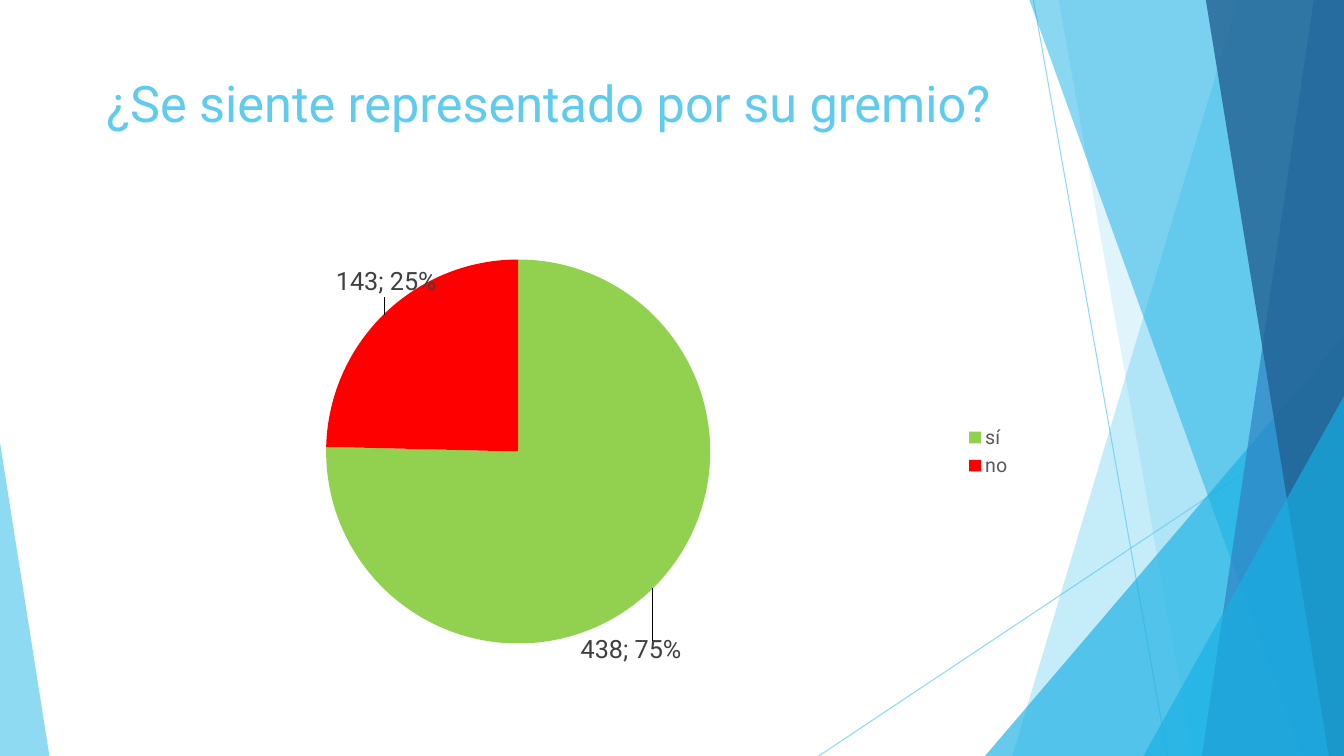
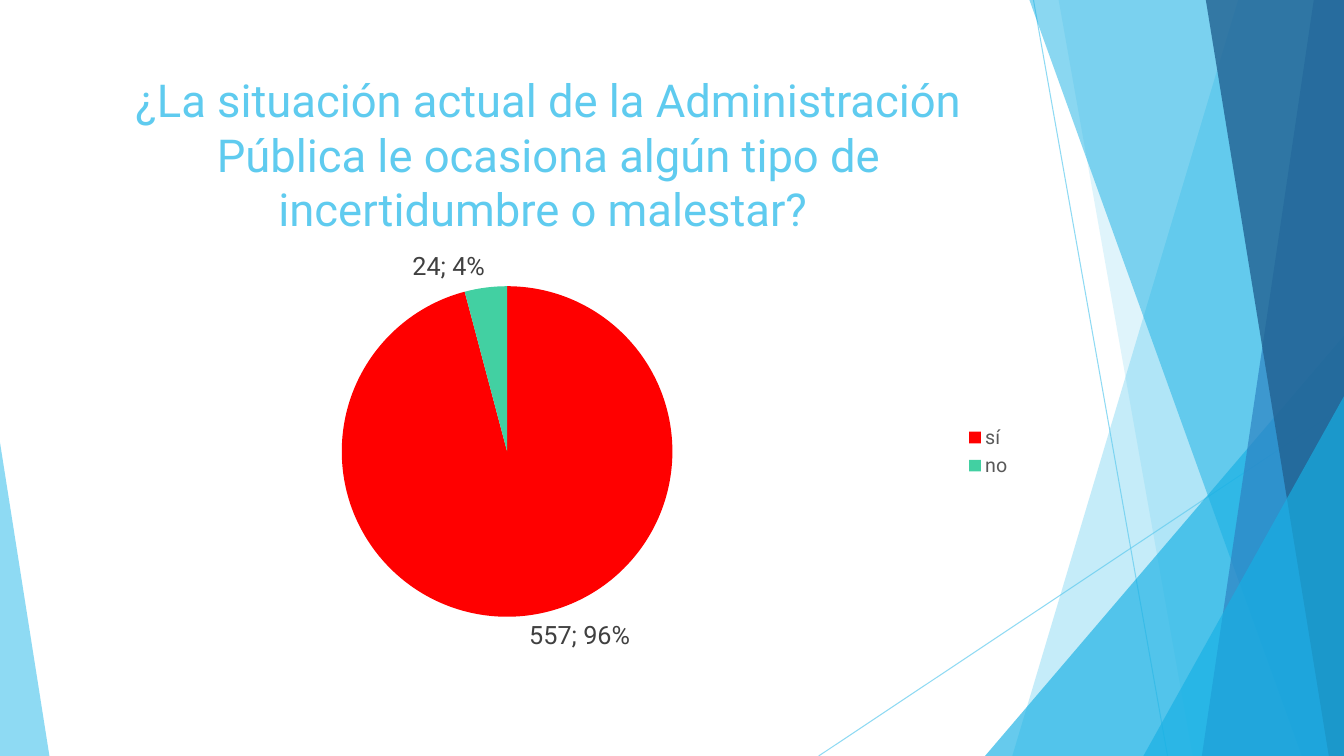
from pptx import Presentation
from pptx.chart.data import CategoryChartData
from pptx.dml.color import RGBColor
from pptx.enum.chart import XL_CHART_TYPE, XL_LABEL_POSITION, XL_LEGEND_POSITION
from pptx.enum.shapes import MSO_CONNECTOR, MSO_SHAPE
from pptx.enum.text import MSO_ANCHOR, MSO_AUTO_SIZE, PP_ALIGN
from pptx.oxml import parse_xml
from pptx.oxml.ns import nsdecls
from pptx.util import Inches, Pt
from lxml import etree

PIE = XL_CHART_TYPE.PIE
OUTSIDE = XL_LABEL_POSITION.OUTSIDE_END
RIGHT = XL_LEGEND_POSITION.RIGHT
LINE = MSO_CONNECTOR.STRAIGHT
WEDGE = MSO_SHAPE.ISOSCELES_TRIANGLE
TOP = MSO_ANCHOR.TOP
FIXED = MSO_AUTO_SIZE.NONE
CENTER = PP_ALIGN.CENTER

WIDTH, HEIGHT = 13.33, 7.5
SKY, CYAN, BLUE, NAVY = "5FCBEF", "17B0E4", "2E83C3", "226292"
GREEN, RED, MINT = "92D050", "FF0000", "42D0A2"
FACE = "Roboto"
TITLE = (0.74, 0.67, 9.4, 1.44)
CHART = (0.74, 2.36, 9.4, 4.24)
MIDDLE = 4.48

RAYS = [((10.25, 0), (11.58, HEIGHT)), ((WIDTH, 4.03), (8.12, HEIGHT))]
BANDS = [
    (12.28, 10.04, SKY, 36),
    (10.5, 11.83, SKY, 20),
    (9.77, 3.33, 3.56, 1, CYAN, 66),
    (10.21, 12.91, CYAN, 50),
    (13.03, 11.92, BLUE, 70),
    (11.96, 13.18, NAVY, 80),
    (11.34, 3.93, 1.99, 1, CYAN, 66),
    (0, 4.39, 0.49, 0, SKY, 70),
]

PIES = [
    {
        "title": "¿Se siente representado por su gremio?",
        "size": 36,
        "counts": (438, 143),
        "colors": (GREEN, RED),
        "center": 5.14,
        "width": 3.81,
        "shifts": ((-0.08, 0.11), (0.06, -0.03)),
    },
    {
        "title": "¿La situación actual de la Administración Pública le "
                 "ocasiona algún tipo de incertidumbre o malestar? ",
        "size": 32.4,
        "counts": (557, 24),
        "colors": (RED, MINT),
        "center": 5.03,
        "width": 3.28,
        "shifts": (),
    },
]


def color(code):
    return RGBColor.from_string(code)


def inches(*sizes):
    return [Inches(size) for size in sizes]


def layout(head="", **parts):
    body = "".join(f'<c:{key} val="{part:.4f}"/>' for key, part in parts.items())
    return parse_xml(
        f'<c:layout {nsdecls("c")}><c:manualLayout>{head}{body}'
        "</c:manualLayout></c:layout>"
    )


class Deck:
    def __init__(self):
        self.show = Presentation()
        self.show.slide_width, self.show.slide_height = inches(WIDTH, HEIGHT)
        self.slide = None

    def page(self, title, size):
        self.slide = self.show.slides.add_slide(self.show.slide_layouts[5])
        for start, end in RAYS:
            self.ray(start, end)
        for band in BANDS:
            if len(band) == 4:
                self.band(*band)
            else:
                self.wedge(*band)
        self.title(title, size)

    def font(self, font, size, code):
        font.name = FACE
        font.size = Pt(size)
        font.color.rgb = color(code)

    def fade(self, fill, alpha):
        code = fill._xPr.find(".//{*}srgbClr")
        tag = etree.QName(code).namespace
        etree.SubElement(code, f"{{{tag}}}alpha", val=str(alpha * 1000))

    def paint(self, shape, code, alpha):
        shape.shadow.inherit = False
        shape.fill.solid()
        shape.fill.fore_color.rgb = color(code)
        self.fade(shape.fill, alpha)
        shape.line.fill.background()

    def ray(self, start, end):
        ray = self.slide.shapes.add_connector(LINE, *inches(*start, *end))
        ray.line.width = Pt(0.75)
        ray.line.color.rgb = color(SKY)
        self.fade(ray.line.fill, 70)
        ray._element.spPr.append(parse_xml(f'<a:effectLst {nsdecls("a")}/>'))

    def band(self, top, base, code, alpha):
        pen = self.slide.shapes.build_freeform(*inches(top, 0))
        ends = [(WIDTH, 0), (WIDTH, HEIGHT), (base, HEIGHT)]
        pen.add_line_segments([inches(*end) for end in ends], close=True)
        self.paint(pen.convert_to_shape(), code, alpha)

    def wedge(self, left, top, width, peak, code, alpha):
        wedge = self.slide.shapes.add_shape(
            WEDGE, *inches(left, top, width, HEIGHT - top))
        wedge.adjustments[0] = peak
        self.paint(wedge, code, alpha)

    def title(self, text, size):
        title = self.slide.shapes.title
        title.left, title.top, title.width, title.height = inches(*TITLE)
        frame = title.text_frame
        frame.text = text
        frame.word_wrap = True
        frame.auto_size = FIXED
        frame.vertical_anchor = TOP
        line = frame.paragraphs[0]
        line.alignment = CENTER
        self.font(line.runs[0].font, size, SKY)
        self.slide.shapes._spTree.append(title._element)

    def pie(self, counts, colors, center, width, shifts):
        data = CategoryChartData()
        data.categories = ["sí", "no"]
        data.add_series("Series 1", counts)
        chart = self.slide.shapes.add_chart(PIE, *inches(*CHART), data).chart
        self.font(chart.font, 18, "000000")
        chart.has_title = False
        chart.has_legend = True
        chart.legend.position = RIGHT
        chart.legend.include_in_layout = False
        self.font(chart.legend.font, 14, "595959")
        plot = chart.plots[0]
        plot.vary_by_categories = True
        series = plot.series[0]
        for index, code in enumerate(colors):
            fill = series.points[index].format.fill
            fill.solid()
            fill.fore_color.rgb = color(code)
        self.labels(series, shifts)
        self.place(chart, center, width)

    def labels(self, series, shifts):
        labels = series.data_labels
        labels.show_value = True
        labels.show_percentage = True
        labels.position = OUTSIDE
        self.font(labels.font, 18, "404040")
        for index, (x, y) in enumerate(shifts):
            label = series.points[index].data_label
            self.font(label.font, 18, "404040")
            label.position = OUTSIDE
            node = labels._element.findall("{*}dLbl")[index]
            node.find("{*}showPercent").set("val", "1")
            node.find("{*}idx").addnext(layout(x=x, y=y))

    def place(self, chart, center, width):
        left, top, wide, high = CHART
        area = chart._chartSpace.find(".//{*}plotArea")
        for old in area.findall("{*}layout"):
            area.remove(old)
        head = ('<c:layoutTarget val="inner"/><c:xMode val="edge"/>'
                '<c:yMode val="edge"/>')
        area.insert(0, layout(
            head,
            x=(center - width / 2 - left) / wide,
            y=(MIDDLE - width / 2 - top) / high,
            w=width / wide,
            h=width / high,
        ))


def main():
    deck = Deck()
    for pie in PIES:
        deck.page(pie["title"], pie["size"])
        deck.pie(pie["counts"], pie["colors"], pie["center"],
                 pie["width"], pie["shifts"])
    deck.show.save("out.pptx")


if __name__ == "__main__":
    main()
